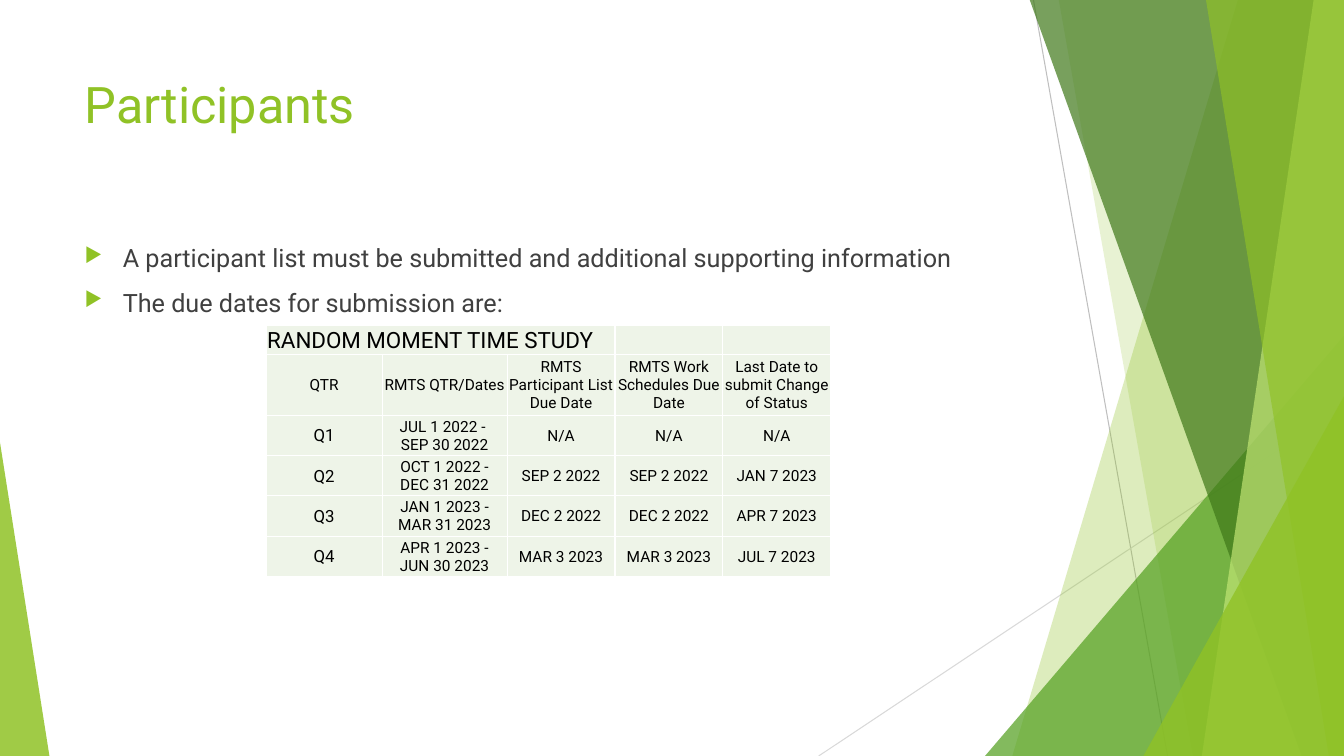
from lxml import etree
from pptx import Presentation
from pptx.dml.color import RGBColor
from pptx.enum.shapes import MSO_CONNECTOR, MSO_SHAPE
from pptx.enum.text import MSO_ANCHOR, PP_ALIGN
from pptx.oxml import parse_xml
from pptx.oxml.ns import nsdecls, qn
from pptx.util import Inches, Pt

FONT = "Roboto"
LIME = RGBColor(0x90, 0xC2, 0x26)
GREEN = RGBColor(0x54, 0xA0, 0x21)
FOREST = RGBColor(0x3F, 0x78, 0x19)
PALE_LIME = RGBColor(0xC0, 0xE4, 0x74)
CELL_FILL = RGBColor(0xEE, 0xF4, 0xE8)
BODY_GREY = RGBColor(0x40, 0x40, 0x40)
RULE_GREY = RGBColor(0xBF, 0xBF, 0xBF)
RULE_LIGHT = RGBColor(0xD9, 0xD9, 0xD9)
BLACK = RGBColor(0, 0, 0)


def paint(s, color, opacity):
    """Fill a facet with a partly transparent colour, without outline or shadow."""
    s.shadow.inherit = False
    s.line.fill.background()
    s.fill.solid()
    s.fill.fore_color.rgb = color
    clr = s.fill._xPr.find(qn("a:solidFill"))[0]
    etree.SubElement(clr, qn("a:alpha"), val=str(opacity * 1000))


def add_text(p, text, size, color):
    for i, line in enumerate(text.split("\n")):
        if i:
            p.add_line_break()
        r = p.add_run()
        r.text = line
        r.font.name = FONT
        r.font.size = Pt(size)
        r.font.color.rgb = color


prs = Presentation()
prs.slide_width = Inches(13.33)
prs.slide_height = Inches(7.5)
slide = prs.slides.add_slide(prs.slide_layouts[6])
shapes = slide.shapes

# Thin background rules
for x1, y1, x2, y2, color in [
    (10.25, 0, 11.58, 7.5, RULE_GREY),
    (13.33, 4.03, 8.12, 7.5, RULE_LIGHT),
]:
    rule = shapes.add_connector(
        MSO_CONNECTOR.STRAIGHT, Inches(x1), Inches(y1), Inches(x2), Inches(y2))
    rule.line.color.rgb = color
    rule.line.width = Pt(0.75)
    etree.SubElement(rule._element.spPr, qn("a:effectLst"))

# Facets, back to front: a band is (top x, bottom x) and runs to the right edge,
# a triangle is (left, top, width, height, apex position)
for outline, color, opacity in [
    ((12.28, 10.04), LIME, 30),
    ((10.5, 11.83), LIME, 20),
    ((9.77, 3.33, 3.56, 4.17, 1), GREEN, 72),
    ((10.21, 12.91), FOREST, 70),
    ((13.03, 11.92), PALE_LIME, 70),
    ((11.96, 13.18), LIME, 65),
    ((11.34, 3.93, 1.99, 3.57, 1), LIME, 80),
    ((0, 4.39, 0.49, 3.11, 0), LIME, 85),
]:
    if len(outline) == 2:
        top_x, bottom_x = outline
        band = shapes.build_freeform(Inches(top_x), Inches(-0.01))
        band.add_line_segments([
            (Inches(x), Inches(y))
            for x, y in [(13.33, -0.01), (13.33, 7.5), (bottom_x, 7.5)]])
        s = band.convert_to_shape()
    else:
        s = shapes.add_shape(
            MSO_SHAPE.ISOSCELES_TRIANGLE, *[Inches(v) for v in outline[:4]])
        s.adjustments[0] = outline[4]
    paint(s, color, opacity)

# Title
title = shapes.add_textbox(Inches(0.74), Inches(0.68), Inches(9.4), Inches(1.44))
title.text_frame.word_wrap = True
add_text(title.text_frame.paragraphs[0], "Participants", 36, LIME)

# Bullets
body = shapes.add_textbox(Inches(0.74), Inches(2.36), Inches(9.4), Inches(4.24))
tf = body.text_frame
tf.word_wrap = True
for i, text in enumerate([
    "A participant list must be submitted and additional supporting information",
    "The due dates for submission are:",
]):
    p = tf.add_paragraph() if i else tf.paragraphs[0]
    p.space_before = Pt(10)
    add_text(p, text, 18, BODY_GREY)
    pPr = p._p.get_or_add_pPr()
    pPr.set("marL", str(Inches(0.38)))
    pPr.set("indent", str(Inches(-0.38)))
    bullet_color = etree.SubElement(pPr, qn("a:buClr"))
    etree.SubElement(bullet_color, qn("a:srgbClr"), val=str(LIME))
    etree.SubElement(pPr, qn("a:buSzPct"), val="80000")
    etree.SubElement(pPr, qn("a:buChar"), char="▶")

# Due date table
rows = [
    ["RANDOM MOMENT TIME STUDY", "", "", "", ""],
    ["QTR", "RMTS QTR/Dates", "RMTS Participant List Due Date",
     "RMTS Work Schedules Due Date", "Last Date to submit Change of Status"],
    ["Q1", "JUL 1 2022 - \nSEP 30 2022", "N/A", "N/A", "N/A"],
    ["Q2", "OCT 1 2022 -\nDEC 31 2022", "SEP 2 2022", "SEP 2 2022", "JAN 7 2023"],
    ["Q3", "JAN 1 2023 -\nMAR 31 2023", "DEC 2 2022", "DEC 2 2022", "APR 7 2023"],
    ["Q4", "APR 1 2023 -\nJUN 30 2023", "MAR 3 2023", "MAR 3 2023", "JUL 7 2023"],
]
col_widths = [1.15, 1.24, 1.07, 1.07, 1.07]
row_heights = [0.29, 0.6, 0.4, 0.4, 0.4, 0.4]
table = shapes.add_table(
    len(rows), len(col_widths), Inches(2.64), Inches(3.23),
    Inches(sum(col_widths)), Inches(sum(row_heights))).table
for column, width in zip(table.columns, col_widths):
    column.width = Inches(width)
for row, height in zip(table.rows, row_heights):
    row.height = Inches(height)
table.cell(0, 0).merge(table.cell(0, 2))

for i, row in enumerate(rows):
    for j, text in enumerate(row):
        cell = table.cell(i, j)
        cell.vertical_anchor = MSO_ANCHOR.MIDDLE
        cell.margin_left = cell.margin_top = cell.margin_right = Inches(0.01)
        cell.margin_bottom = 0
        tcPr = cell._tc.get_or_add_tcPr()
        for side in ("lnL", "lnR", "lnT", "lnB"):
            tcPr.append(parse_xml(
                f'<a:{side} {nsdecls("a")} w="12700"><a:solidFill>'
                f'<a:srgbClr val="FFFFFF"/></a:solidFill></a:{side}>'))
        cell.fill.solid()
        cell.fill.fore_color.rgb = CELL_FILL
        p = cell.text_frame.paragraphs[0]
        if i:
            p.alignment = PP_ALIGN.CENTER
        if text:
            size = 16 if i == 0 else 12 if i > 1 and j == 0 else 11
            add_text(p, text, size, BLACK)
        else:
            etree.SubElement(p._p, qn("a:endParaRPr"), sz="1100")

prs.save("out.pptx")
